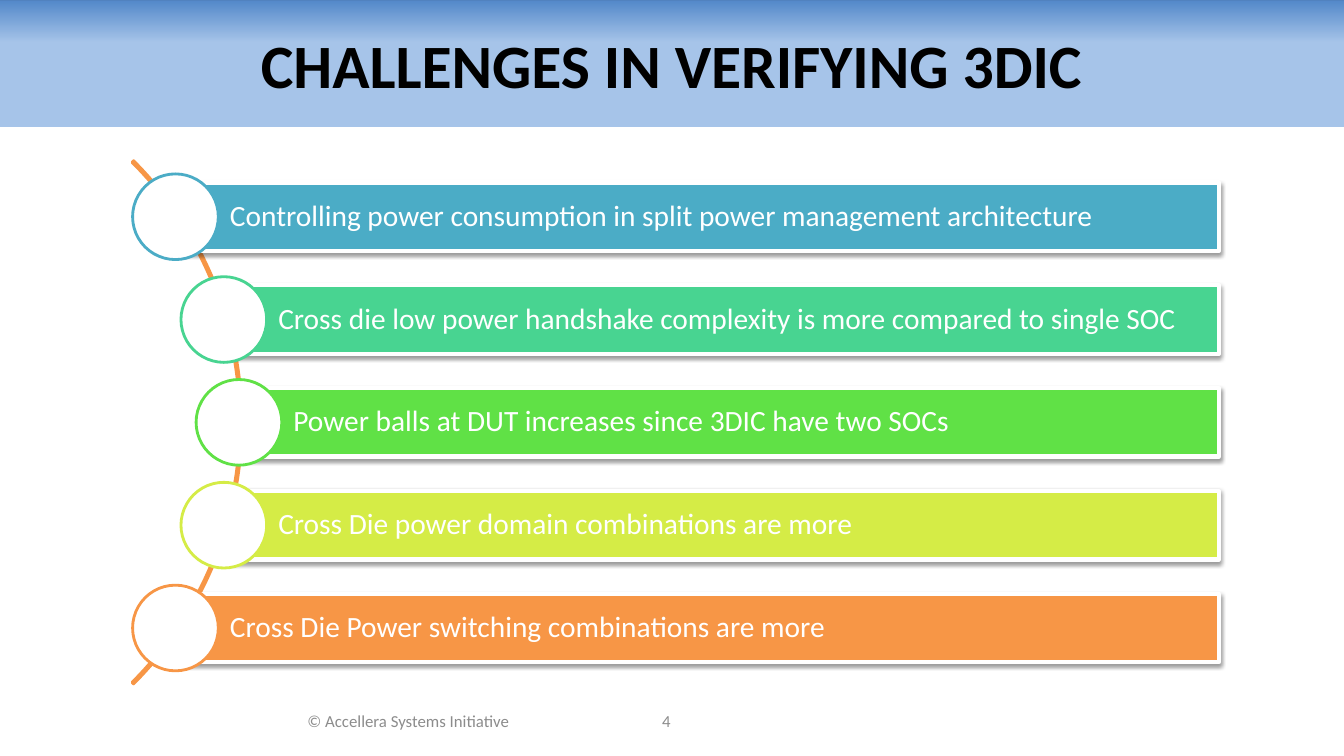
"""Build the slide on the challenges in verifying 3DIC."""
from dataclasses import dataclass

from lxml import etree
from pptx import Presentation
from pptx import util as u
from pptx.dml.color import RGBColor
from pptx.enum import shapes, text
from pptx.oxml import ns

BLACK = RGBColor(0x00, 0x00, 0x00)
WHITE = RGBColor(0xFF, 0xFF, 0xFF)
GRAY = RGBColor(0x8C, 0x8C, 0x8C)
NAVY = RGBColor(0x4F, 0x81, 0xBD)
BLUE = RGBColor(0x55, 0x8E, 0xD5)
TEAL = RGBColor(0x4B, 0xAC, 0xC6)
MINT = RGBColor(0x48, 0xD4, 0x91)
GREEN = RGBColor(0x60, 0xE1, 0x46)
LIME = RGBColor(0xD5, 0xEC, 0x46)
ORANGE = RGBColor(0xF7, 0x96, 0x46)

WIDE = 13.33
TOP, PITCH, HIGH, RIGHT = 1.81, 1.02, 0.68, 12.09
RING = 0.85
FORMS = shapes.MSO_SHAPE


@dataclass
class Bar:
    left: float
    color: RGBColor
    words: str


@dataclass
class Note:
    left: float
    width: float
    words: str


BARS = [
    Bar(1.74, TEAL, "Controlling power consumption in split power management architecture"),
    Bar(2.22, MINT, "Cross die low power handshake complexity is more compared to single SOC"),
    Bar(2.37, GREEN, "Power balls at DUT increases since 3DIC have two SOCs"),
    Bar(2.22, LIME, "Cross Die power domain combinations are more"),
    Bar(1.74, ORANGE, "Cross Die Power switching combinations are more"),
]
NOTES = [
    Note(2.44, 3.22, "© Accellera Systems Initiative"),
    Note(5.33, 2.56, "4"),
]


def write(shape, words: str, *, size: float, color: RGBColor, bold: bool = False,
          align=text.PP_ALIGN.CENTER, pads=(0.1, 0.05, 0.1, 0.05), lead: float = 1.0) -> None:
    """Put formatted text in a shape."""
    frame = shape.text_frame
    frame.word_wrap = True
    frame.auto_size = text.MSO_AUTO_SIZE.NONE
    frame.vertical_anchor = text.MSO_ANCHOR.MIDDLE
    (frame.margin_left, frame.margin_top,
     frame.margin_right, frame.margin_bottom) = map(u.Inches, pads)
    para = frame.paragraphs[0]
    para.alignment = align
    para.line_spacing = lead
    run = para.add_run()
    run.text = words
    run.font.name = "Calibri"
    run.font.size = u.Pt(size)
    run.font.bold = bold
    run.font.color.rgb = color


def draw(slide, form, left: float, top: float, width: float, height: float,
         fill: RGBColor | None = None, line: RGBColor | None = None, weight: float = 2):
    """Add a preset shape with flat fill and line."""
    shape = slide.shapes.add_shape(form, *map(u.Inches, (left, top, width, height)))
    shape.shadow.inherit = False
    if fill is None:
        shape.fill.background()
    else:
        shape.fill.solid()
        shape.fill.fore_color.rgb = fill
    if line is None:
        shape.line.fill.background()
    else:
        shape.line.color.rgb = line
        shape.line.width = u.Pt(weight)
    return shape


def fade(node, share: int) -> None:
    """Set the opacity of a colour node in percent."""
    etree.SubElement(node, ns.qn("a:alpha"), val=str(share * 1000))


def shade(shape) -> None:
    """Give a shape a soft shadow below it."""
    effects = shape.element.spPr.find(ns.qn("a:effectLst"))
    outer = etree.SubElement(effects, ns.qn("a:outerShdw"), blurRad=str(u.Pt(3.1)),
                             dist=str(u.Pt(1.6)), dir="5400000", rotWithShape="0")
    fade(etree.SubElement(outer, ns.qn("a:srgbClr"), val=str(BLACK)), 38)


def add_bar(slide, rank: int, bar: Bar) -> None:
    """Draw one text bar and the ring on its left end."""
    top = TOP + rank * PITCH
    box = draw(slide, FORMS.RECTANGLE, bar.left, top, RIGHT - bar.left, HIGH,
               bar.color, WHITE, 3)
    shade(box)
    write(box, bar.words, size=21, color=WHITE, align=text.PP_ALIGN.LEFT,
          pads=(0.54, 0.06, 0.06, 0.06), lead=0.9)
    draw(slide, FORMS.OVAL, bar.left - RING / 2, top + (HIGH - RING) / 2,
         RING, RING, WHITE, bar.color)


def add_glow(slide) -> None:
    """Draw the strip that fades from blue to white."""
    strip = draw(slide, FORMS.RECTANGLE, 0, 0, WIDE, 0.42)
    strip.fill.gradient()
    strip.fill.gradient_angle = 270
    for stop, color, place in zip(strip.fill.gradient_stops, (NAVY, WHITE), (0, 1)):
        stop.color.rgb = color
        stop.position = place


def add_title(slide) -> None:
    """Format the title as a clear blue band in front."""
    title = slide.shapes.title
    title.left, title.top, title.width, title.height = map(u.Inches, (0, 0.01, WIDE, 1.25))
    title.fill.solid()
    title.fill.fore_color.rgb = BLUE
    fade(title.element.spPr.find(".//" + ns.qn("a:srgbClr")), 52)
    write(title, "CHALLENGES IN VERIFYING 3DIC", size=44, color=BLACK, bold=True)
    title.element.getparent().append(title.element)


def main() -> None:
    """Build and save the deck."""
    deck = Presentation()
    deck.slide_width, deck.slide_height = u.Inches(WIDE), u.Inches(7.5)
    slide = deck.slides.add_slide(deck.slide_layouts[5])
    add_glow(slide)
    for note in NOTES:
        box = slide.shapes.add_textbox(*map(u.Inches, (note.left, 6.95, note.width, 0.4)))
        write(box, note.words, size=12, color=GRAY)
    arc = draw(slide, FORMS.BLOCK_ARC, -4.94, 0.52, 7.34, 7.34, line=ORANGE)
    for rank, value in enumerate((189, 27, 0.003)):
        arc.adjustments[rank] = value
    for rank, bar in enumerate(BARS):
        add_bar(slide, rank, bar)
    add_title(slide)
    deck.save("out.pptx")


if __name__ == "__main__":
    main()
